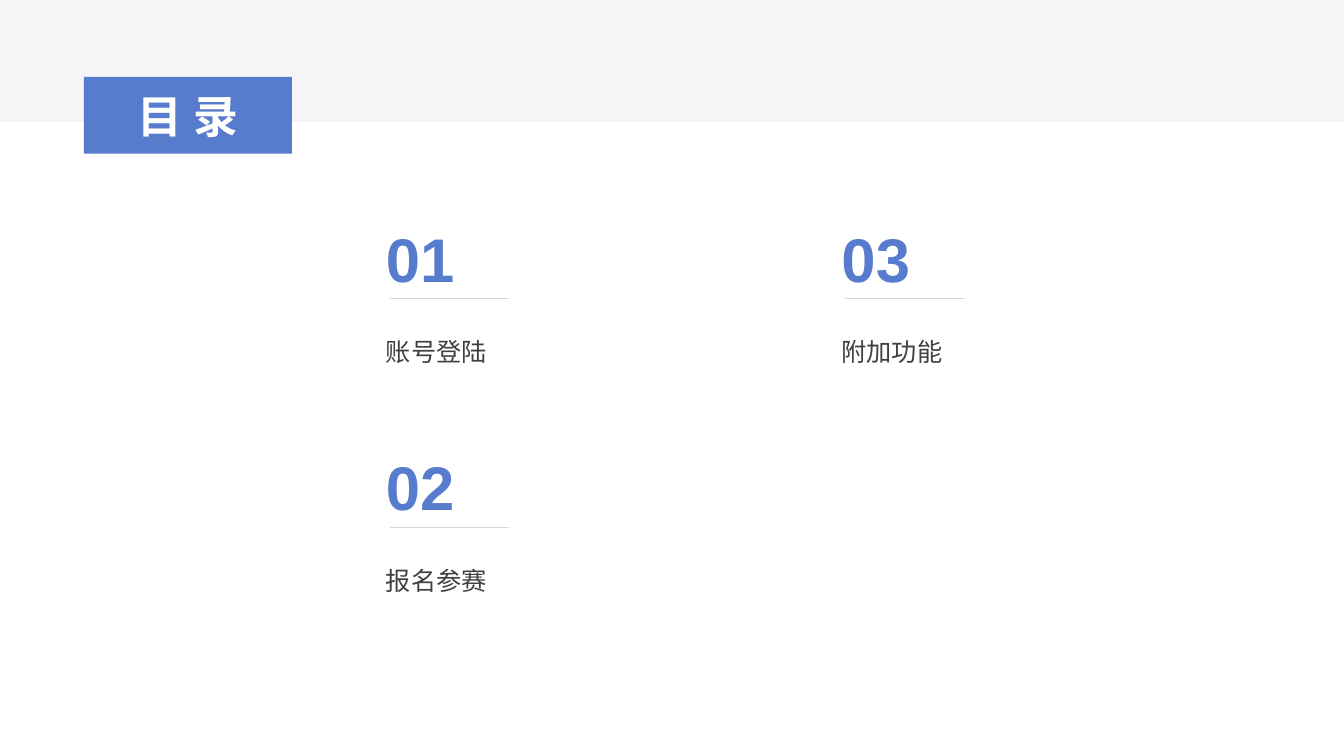
from pptx import Presentation
from pptx.dml.color import RGBColor as RGB
from pptx.enum.shapes import MSO_CONNECTOR as Conn, MSO_SHAPE as Geo
from pptx.enum.text import MSO_ANCHOR as Anchor, PP_ALIGN as Align
from pptx.oxml.ns import qn
from pptx.util import Inches, Pt
from lxml.etree import SubElement

COLORS = {"band": "F5F5F8", "blue": "577CCE", "text": "404040",
          "rule": "D9D9D9", "white": "FFFFFF"}
FONT = "Arial"
COLS, ROWS = 32, 18


class Page:
    """Draws styled elements on one slide, measured in grid columns and rows."""

    def __init__(self, deck):
        self.slide = deck.slides.add_slide(deck.slide_layouts[6])
        self.unit_x = deck.slide_width / COLS
        self.unit_y = deck.slide_height / ROWS

    def place(self, col, row, wide, high):
        return (round(col * self.unit_x), round(row * self.unit_y),
                round(wide * self.unit_x), round(high * self.unit_y))

    def color(self, name):
        return RGB.from_string(COLORS[name])

    def set_text(self, frame, text, size, color, bold=False, align=Align.LEFT):
        para = frame.paragraphs[0]
        para.text, para.alignment = text, align
        font = para.font
        font.name, font.size, font.bold = FONT, Pt(size), bold
        font.color.rgb = self.color(color)
        return para

    def block(self, col, row, wide, high, fill):
        shape = self.slide.shapes.add_shape(
            Geo.RECTANGLE, *self.place(col, row, wide, high))
        shape.shadow.inherit = False
        shape.fill.solid()
        shape.fill.fore_color.rgb = self.color(fill)
        shape.line.fill.background()
        return shape

    def title(self, col, row, wide, high, text):
        frame = self.block(col, row, wide, high, "blue").text_frame
        frame.vertical_anchor = Anchor.MIDDLE
        para = self.set_text(frame, text, 32, "white", True, Align.CENTER)
        para.runs[0].font._element.set("spc", "800")

    def label(self, col, row, wide, high, text, size, color, **style):
        box = self.slide.shapes.add_textbox(*self.place(col, row, wide, high))
        box.text_frame.word_wrap = True
        return self.set_text(box.text_frame, text, size, color, **style)

    def rule(self, col, row, wide):
        x, y, run, _ = self.place(col, row, wide, 0)
        line = self.slide.shapes.add_connector(Conn.STRAIGHT, x + run, y, x, y)
        line.line.color.rgb = self.color("rule")
        line.line.width = Pt(0.5)
        SubElement(line._element.spPr, qn("a:effectLst"))

    def entry(self, col, row, num, text):
        self.label(col, row, 2.14, 2, num, 44, "blue", bold=True)
        self.rule(col + 0.33, row + 1.97, 2.84)
        para = self.label(col, row + 2.41, 8.5, 2.5, text, 18, "text",
                          align=Align.JUSTIFY)
        para.line_spacing, para.space_after = 1.5, Pt(20)


def main():
    deck = Presentation()
    deck.slide_width, deck.slide_height = Inches(13.33), Inches(7.5)
    page = Page(deck)
    page.block(0, 0, COLS, 2.9, "band")
    for i, text in enumerate(["账号登陆", "报名参赛", "附加功能"]):
        col, row = divmod(i, 2)
        page.entry(8.95 + col * 10.85, 5.13 + row * 5.45, f"{i + 1:02}", text)
    page.title(2, 1.83, 4.95, 1.83, "目录")
    deck.save("out.pptx")


if __name__ == "__main__":
    main()
